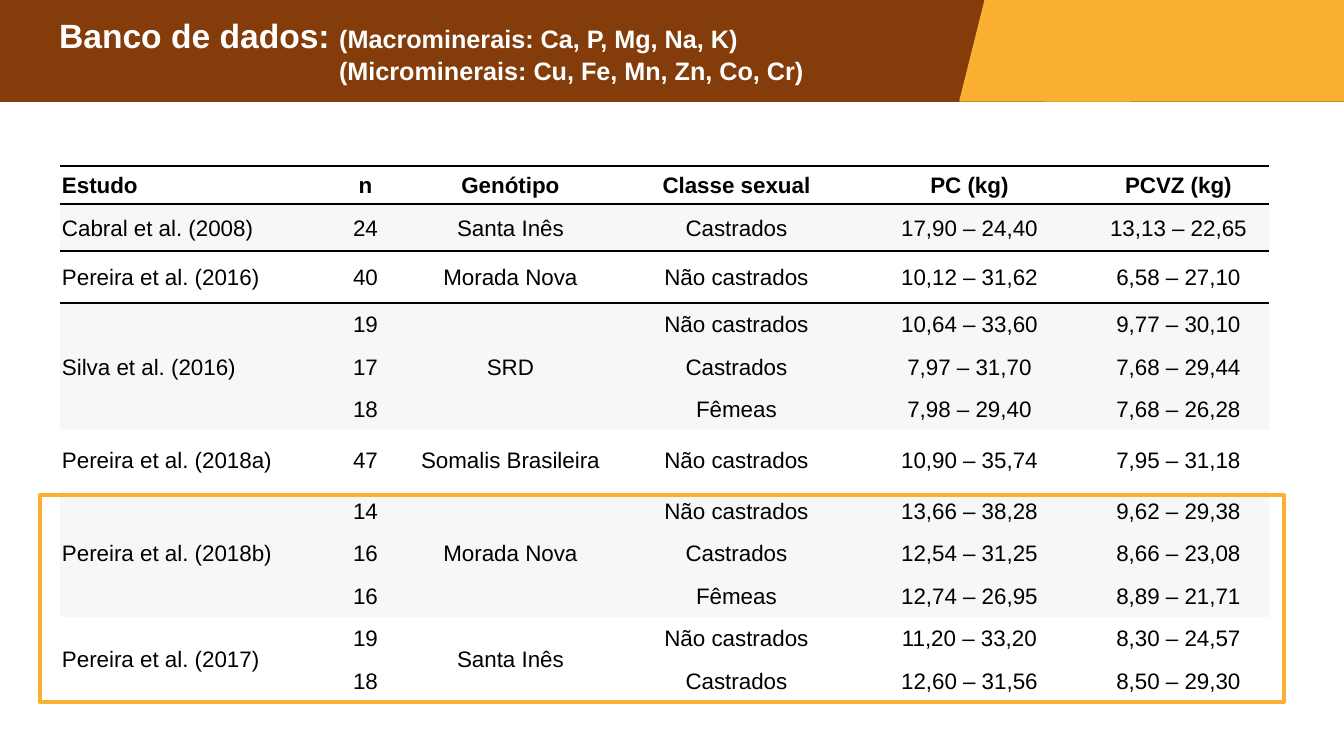
"""Build the slide listing the studies in the mineral database."""
from dataclasses import dataclass

from lxml import etree
from pptx import Presentation
from pptx import util as u
from pptx.dml.color import RGBColor
from pptx.enum import shapes, text
from pptx.oxml import ns

SCALE = 914400 / 100.8
BROWN = RGBColor(0x84, 0x3C, 0x0B)
AMBER = RGBColor(0xFB, 0xB0, 0x31)
PALE = RGBColor(0xF7, 0xF7, 0xF7)
WHITE = RGBColor(0xFF, 0xFF, 0xFF)
BLACK = RGBColor(0, 0, 0)
PLAIN_TABLE = "{2D5ABB26-0587-4C30-8999-92F81FD0307C}"
COLUMNS = [272, 67, 223, 229, 237, 181]
ROWS = [27, 38, 47, 52, 42, 43, 42, 60, 42, 43, 42, 43, 42]
HEADINGS = ("Estudo", "n", "Genótipo", "Classe sexual", "PC (kg)", "PCVZ (kg)")
HEADING_ROW = 1
RULED_ROWS = (0, 1, 2, len(ROWS) - 1)


@dataclass(frozen=True)
class Group:
    """Animals of one sex class within a study."""
    count: str
    sex: str
    weight: str
    empty_weight: str


@dataclass(frozen=True)
class Study:
    """A study, its genotype and its groups."""
    name: str
    genotype: str
    groups: tuple[Group, ...]


@dataclass(frozen=True)
class Block:
    """A plain shape, placed in px."""
    kind: shapes.MSO_SHAPE
    left: int
    top: int
    width: int
    height: int
    line_width: int = 1
    filled: bool = True
    rotation: int = 0


STUDIES = (
    Study("Cabral et al. (2008)", "Santa Inês", (
        Group("24", "Castrados", "17,90 – 24,40", "13,13 – 22,65"),)),
    Study("Pereira et al. (2016)", "Morada Nova", (
        Group("40", "Não castrados", "10,12 – 31,62", "6,58 – 27,10"),)),
    Study("Silva et al. (2016)", "SRD", (
        Group("19", "Não castrados", "10,64 – 33,60", "9,77 – 30,10"),
        Group("17", "Castrados", "7,97 – 31,70", "7,68 – 29,44"),
        Group("18", "Fêmeas", "7,98 – 29,40", "7,68 – 26,28"))),
    Study("Pereira et al. (2018a)", "Somalis Brasileira", (
        Group("47", "Não castrados", "10,90 – 35,74", "7,95 – 31,18"),)),
    Study("Pereira et al. (2018b)", "Morada Nova", (
        Group("14", "Não castrados", "13,66 – 38,28", "9,62 – 29,38"),
        Group("16", "Castrados", "12,54 – 31,25", "8,66 – 23,08"),
        Group("16", "Fêmeas", "12,74 – 26,95", "8,89 – 21,71"))),
    Study("Pereira et al. (2017)", "Santa Inês", (
        Group("19", "Não castrados", "11,20 – 33,20", "8,30 – 24,57"),
        Group("18", "Castrados", "12,60 – 31,56", "8,50 – 29,30"))),
)
ACCENTS = (
    Block(shapes.MSO_SHAPE.PENTAGON, 994, 0, 350, 101, rotation=180),
    Block(shapes.MSO_SHAPE.PARALLELOGRAM, 960, 0, 195, 101),
)
HIGHLIGHT = Block(shapes.MSO_SHAPE.RECTANGLE, 40, 495, 1244, 207, line_width=3, filled=False)


def px(length: int) -> u.Emu:
    """Turn px into EMU."""
    return u.Emu(round(length * SCALE))


def write(para, words: str, *, size: int, color: RGBColor, bold: bool = False) -> None:
    """Add a formatted span to a paragraph."""
    span = para.add_run()
    span.text = words
    span.font.name = "Arial"
    span.font.size = u.Pt(size)
    span.font.bold = bold
    span.font.color.rgb = color


def draw_block(page, block: Block) -> None:
    """Draw an amber shape."""
    shape = page.shapes.add_shape(block.kind, px(block.left), px(block.top),
                                  px(block.width), px(block.height))
    shape.shadow.inherit = False
    shape.rotation = block.rotation
    if block.filled:
        shape.fill.solid()
        shape.fill.fore_color.rgb = AMBER
    else:
        shape.fill.background()
    shape.line.color.rgb = AMBER
    shape.line.width = u.Pt(block.line_width)


def draw_title(page) -> None:
    """Format the title placeholder as the brown band."""
    title = page.shapes.title
    title.left, title.top, title.width, title.height = px(0), px(0), px(1344), px(101)
    title.fill.solid()
    title.fill.fore_color.rgb = BROWN
    title.line.color.rgb = BROWN
    title.line.width = u.Pt(1)
    frame = title.text_frame
    frame.word_wrap = True
    frame.auto_size = text.MSO_AUTO_SIZE.NONE
    frame.vertical_anchor = text.MSO_ANCHOR.MIDDLE
    first, second = frame.paragraphs[0], frame.add_paragraph()
    for para, indent in ((first, 49), (second, 329)):
        para.alignment = text.PP_ALIGN.LEFT
        para.line_spacing = 1.0
        para.space_before = u.Pt(0)
        properties = para._p.get_or_add_pPr()
        properties.set("marL", str(px(indent)))
        properties.set("indent", "0")
    write(first, "Banco de dados: ", size=24, color=WHITE, bold=True)
    write(first, "(Macrominerais: Ca, P, Mg, Na, K)", size=18, color=WHITE, bold=True)
    write(second, "(Microminerais: Cu, Fe, Mn, Zn, Co, Cr)", size=18, color=WHITE, bold=True)


def rule_edge(cell, edge: str) -> None:
    """Draw a thin black border on one edge of a cell."""
    properties = cell._tc.get_or_add_tcPr()
    line = etree.Element(ns.qn(f"a:{edge}"), w=str(u.Pt(1)))
    fill = etree.SubElement(line, ns.qn("a:solidFill"))
    etree.SubElement(fill, ns.qn("a:srgbClr"), val=str(BLACK))
    properties.insert(0, line)


def fill_cell(cell, words: str, *, centred: bool, bold: bool = False) -> None:
    """Write the text of a table cell."""
    para = cell.text_frame.paragraphs[0]
    para.alignment = text.PP_ALIGN.CENTER if centred else text.PP_ALIGN.LEFT
    para.line_spacing = 1.07
    para.space_after = u.Pt(8)
    write(para, words, size=16, color=BLACK, bold=bold)


def draw_table(page) -> None:
    """Draw the table of studies."""
    frame = page.shapes.add_table(len(ROWS), len(COLUMNS), px(60), px(139),
                                  px(sum(COLUMNS)), px(sum(ROWS)))
    table = frame.table
    table.first_row = table.horz_banding = False
    table._tbl.tblPr.find(ns.qn("a:tableStyleId")).text = PLAIN_TABLE
    for column, width in zip(table.columns, COLUMNS):
        column.width = px(width)
    for row, height in zip(table.rows, ROWS):
        row.height = px(height)

    shaded_rows = set()
    row_index = HEADING_ROW + 1
    for order, study in enumerate(STUDIES):
        last = row_index + len(study.groups) - 1
        if order % 2 == 0:
            shaded_rows.update(range(row_index, last + 1))
        for column, words in ((0, study.name), (2, study.genotype)):
            cell = table.cell(row_index, column)
            if last > row_index:
                cell.merge(table.cell(last, column))
            fill_cell(cell, words, centred=column > 0)
        for group in study.groups:
            values = (group.count, group.sex, group.weight, group.empty_weight)
            for column, words in zip((1, 3, 4, 5), values):
                fill_cell(table.cell(row_index, column), words, centred=True)
            row_index += 1
    for column, words in enumerate(HEADINGS):
        fill_cell(table.cell(HEADING_ROW, column), words, centred=column > 0, bold=True)

    table.cell(0, 0).merge(table.cell(0, len(COLUMNS) - 1))
    for index, row in enumerate(table.rows):
        for cell in row.cells:
            cell.margin_left = cell.margin_right = px(2)
            cell.margin_top = cell.margin_bottom = 0
            cell.vertical_anchor = text.MSO_ANCHOR.MIDDLE
            if index in shaded_rows:
                cell.fill.solid()
                cell.fill.fore_color.rgb = PALE
            else:
                cell.fill.background()
            if index in RULED_ROWS:
                rule_edge(cell, "lnB")
            if index - 1 in RULED_ROWS:
                rule_edge(cell, "lnT")
            if index == 0:
                para = cell.text_frame.paragraphs[0]
                etree.SubElement(para._p, ns.qn("a:endParaRPr"), sz="1000")


def main() -> None:
    """Build and save the deck."""
    deck = Presentation()
    deck.slide_width, deck.slide_height = px(1344), px(756)
    page = deck.slides.add_slide(deck.slide_layouts[5])
    draw_title(page)
    for block in ACCENTS:
        draw_block(page, block)
    draw_table(page)
    draw_block(page, HIGHLIGHT)
    deck.save("out.pptx")


if __name__ == "__main__":
    main()
